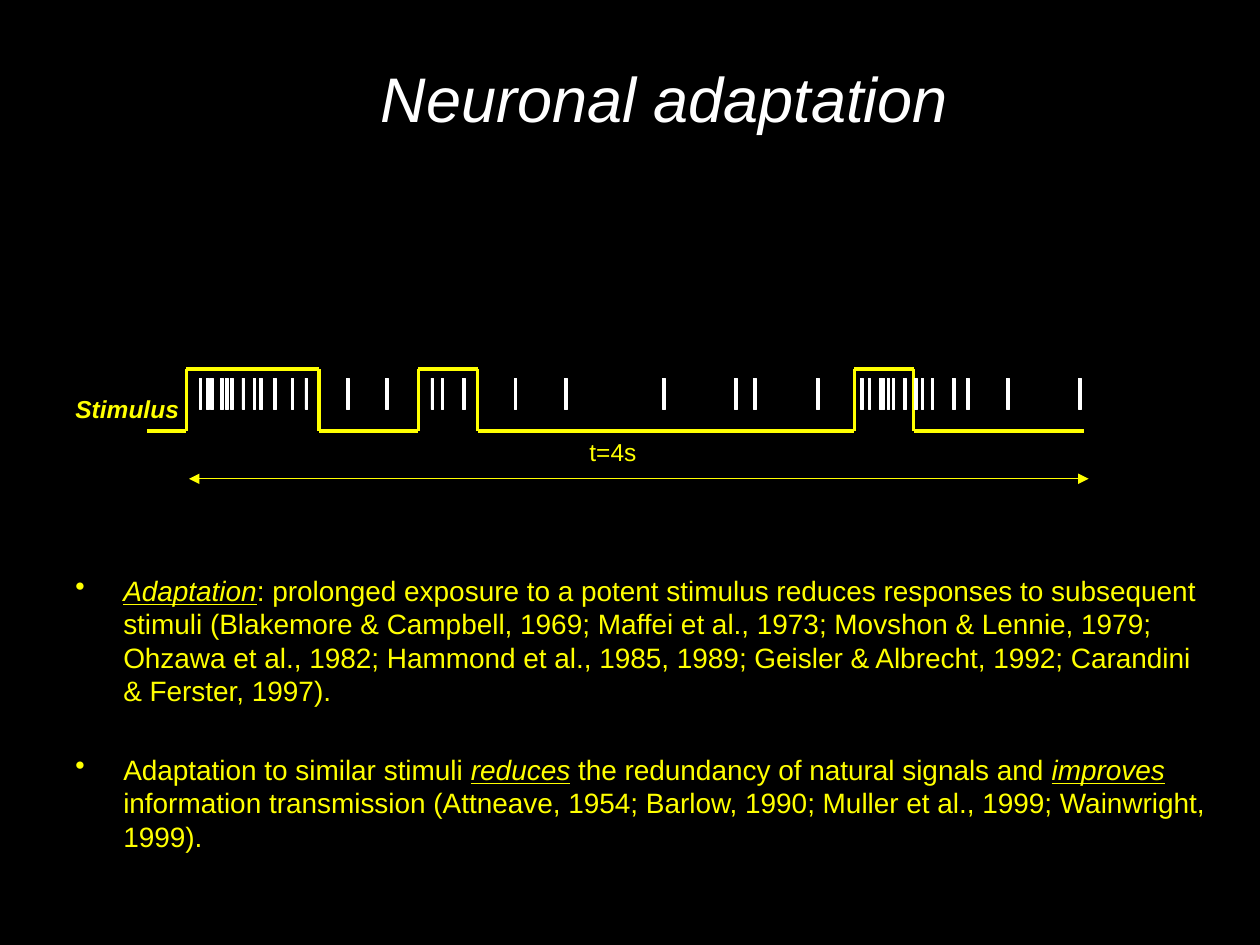
from lxml import etree
from pptx import Presentation
from pptx.dml.color import RGBColor
from pptx.enum.shapes import MSO_CONNECTOR, MSO_SHAPE
from pptx.enum.text import MSO_ANCHOR, MSO_AUTO_SIZE, PP_ALIGN
from pptx.oxml.ns import qn
from pptx.util import Inches, Pt

LINE = MSO_CONNECTOR.STRAIGHT
RECT = MSO_SHAPE.RECTANGLE
TOP = MSO_ANCHOR.TOP
FIXED = MSO_AUTO_SIZE.NONE
LEFT = PP_ALIGN.LEFT

BLACK, WHITE, YELLOW = "000000", "FFFFFF", "FFFF00"
TITLE = ("Neuronal adaptation", (2.92, 0.42, 5.25, 0.71))
LABELS = [
    ("t=4s", (4.58, 3.42, 2, 0.33), False),
    ("Stimulus", (0.5, 3.08, 2, 0.33), True),
]
BODY = (0.5, 4.5, 9.25, 2.92)
POINTS = [
    [("Adaptation", True),
     (": prolonged exposure to a potent stimulus reduces responses to "
      "subsequent stimuli (Blakemore & Campbell, 1969; Maffei et al., 1973; "
      "Movshon & Lennie, 1979; Ohzawa et al., 1982; Hammond et al., 1985, "
      "1989; Geisler & Albrecht, 1992; Carandini & Ferster, 1997).", False)],
    [("Adaptation to similar stimuli ", False),
     ("reduces", True),
     (" the redundancy of natural signals and ", False),
     ("improves", True),
     (" information transmission (Attneave, 1954; Barlow, 1990; "
      "Muller et al., 1999; Wainwright, 1999).", False)],
]
GAP, INDENT = 25.6, 0.38

HIGH, LOW = 2.93, 3.42
PULSES = [(1.48, 2.53), (3.32, 3.79), (6.78, 7.25)]
START, END = 1.17, 8.6
ARROWS = [(6.23, 8.64), (7.75, 1.5)]
AXIS = 3.8
SPIKES = [
    1.58, 1.64, 1.67, 1.75, 1.79, 1.83, 1.92, 2.01, 2.06, 2.17, 2.31, 2.42,
    2.75, 3.06, 3.42, 3.5, 3.67, 4.08, 4.48, 5.26, 5.83, 5.98, 6.48,
    6.83, 6.89, 6.98, 7, 7.04, 7.08, 7.17, 7.26, 7.31, 7.39, 7.56, 7.67,
    7.99, 8.56,
]
SPIKE_TOP, SPIKE_W, SPIKE_H = 3, 0.02, 0.25


def color(code):
    return RGBColor.from_string(code)


def style(font, size, code):
    font.name, font.size = "Arial", Pt(size)
    font.color.rgb = color(code)


def place(shape, box):
    shape.left, shape.top, shape.width, shape.height = map(Inches, box)


def add_text(slide, box):
    frame = slide.shapes.add_textbox(*map(Inches, box)).text_frame
    frame.word_wrap = True
    return frame


def add_line(slide, x1, y1, x2, y2, width, arrow=False):
    line = slide.shapes.add_connector(LINE, *map(Inches, (x1, y1, x2, y2)))
    line.line.color.rgb = color(YELLOW)
    line.line.width = Pt(width)
    if arrow:
        ln = line.line._get_or_add_ln()
        etree.SubElement(ln, qn("a:tailEnd"), type="triangle")
    etree.SubElement(line._element.spPr, qn("a:effectLst"))


def add_title(slide):
    text, box = TITLE
    shape = slide.shapes.title
    place(shape, box)
    frame = shape.text_frame
    frame.text = text
    frame.auto_size, frame.vertical_anchor = FIXED, TOP
    para = frame.paragraphs[0]
    para.alignment = LEFT
    style(para.font, 36, WHITE)
    para.font.italic = True


def add_trace(slide):
    rises, falls = zip(*PULSES)
    for x1, x2 in zip((START, *falls), (*rises, END)):
        add_line(slide, x1, LOW, x2, LOW, 2)
    for x1, x2 in PULSES:
        add_line(slide, x1, HIGH, x2, HIGH, 2)
        for x in (x1, x2):
            add_line(slide, x, LOW, x, HIGH, 2)


def add_spikes(slide):
    for x in SPIKES:
        box = (x, SPIKE_TOP, SPIKE_W, SPIKE_H)
        spike = slide.shapes.add_shape(RECT, *map(Inches, box))
        spike.shadow.inherit = False
        spike.fill.solid()
        spike.fill.fore_color.rgb = color(WHITE)
        spike.line.color.rgb = color(WHITE)
        spike.line.width = Pt(0.38)


def add_labels(slide):
    for text, box, strong in LABELS:
        para = add_text(slide, box).paragraphs[0]
        para.text = text
        style(para.font, 14, YELLOW)
        para.font.bold = para.font.italic = strong


def add_points(slide):
    frame = add_text(slide, BODY)
    for i, runs in enumerate(POINTS):
        para = frame.add_paragraph() if i else frame.paragraphs[0]
        props = para._p.get_or_add_pPr()
        props.set("marL", str(Inches(INDENT)))
        props.set("indent", str(-Inches(INDENT)))
        etree.SubElement(props, qn("a:buChar"), char="•")
        para.space_before = Pt(GAP * i)
        style(para.font, 16, YELLOW)
        for text, key in runs:
            run = para.add_run()
            run.text = text
            if key:
                run.font.italic = run.font.underline = True


def main():
    deck = Presentation()
    deck.slide_width, deck.slide_height = Inches(10), Inches(7.5)
    slide = deck.slides.add_slide(deck.slide_layouts[5])
    fill = slide.background.fill
    fill.solid()
    fill.fore_color.rgb = color(BLACK)
    add_title(slide)
    add_points(slide)
    for x1, x2 in ARROWS:
        add_line(slide, x1, AXIS, x2, AXIS, 0.75, True)
    add_trace(slide)
    add_spikes(slide)
    add_labels(slide)
    deck.save("out.pptx")


if __name__ == "__main__":
    main()
